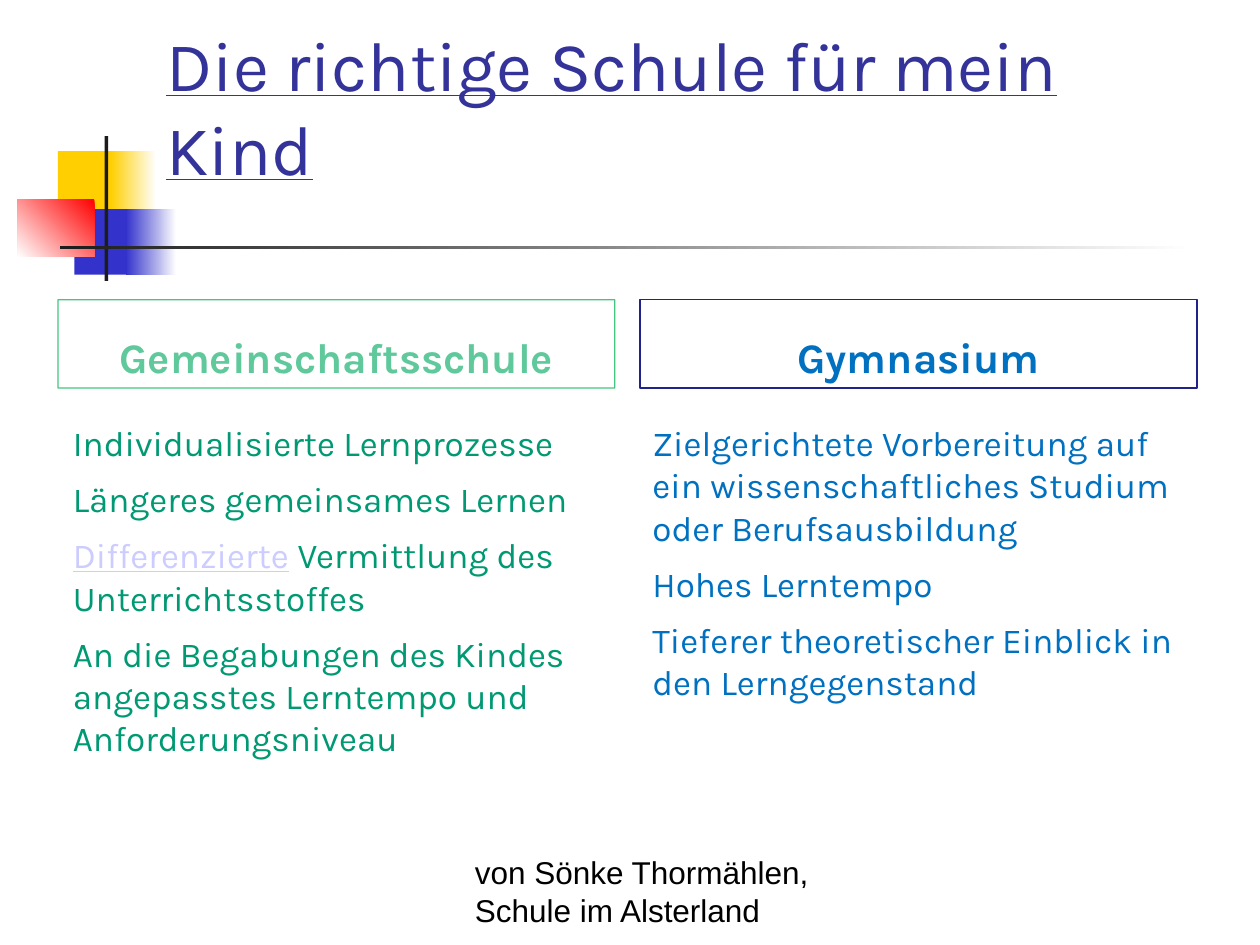
from pptx import Presentation
from pptx.dml.color import RGBColor
from pptx.enum.shapes import MSO_SHAPE
from pptx.enum.text import MSO_ANCHOR, PP_ALIGN
from pptx.oxml.ns import qn
from pptx.util import Pt
from lxml.etree import SubElement

PX = 9144  # EMU per px, at 100 px to the inch

THEME = {
    "font": "Karla", "footer_font": "Arial",
    "title_size": 40, "heading_size": 24, "body_size": 20, "footer_size": 18,
    "title": "333399", "footer": "000000", "accent": "CCCCFF",
    "yellow": "FFCF01", "blue": "3333CC", "red": "FF0000",
    "bar": "1C1C1C", "white": "FFFFFF",
    "green_heading": "60C99C", "green_text": "009973", "green_line": "00B050",
    "blue_text": "0070C0", "blue_line": "22228B",
}


def color(name):
    return RGBColor.from_string(THEME[name])


def add_text(slide, place, paragraphs, font, size, fill, anchor=MSO_ANCHOR.TOP, before=0):
    """Add a wrapped text box; each paragraph is a list of span texts."""
    box = slide.shapes.add_textbox(*[n * PX for n in place])
    frame = box.text_frame
    frame.word_wrap = True
    frame.vertical_anchor = anchor
    for index, texts in enumerate(paragraphs):
        para = frame.add_paragraph() if index else frame.paragraphs[0]
        para.space_before = Pt(before)
        for text in texts:
            span = para.add_run()
            span.text = text
            span.font.name = THEME[font]
            span.font.size = Pt(THEME[size])
            span.font.color.rgb = color(fill)
    return box


deck = Presentation()
deck.slide_width, deck.slide_height = 1000 * PX, 750 * PX
page = deck.slides.add_slide(deck.slide_layouts[6])

# Decoration: place, colours from start to end, clockwise gradient angle
decoration = [
    ((46, 120, 48, 52), ["yellow"], 0),
    ((88, 120, 36, 52), ["white", "yellow"], 180),
    ((59, 166, 46, 52), ["blue"], 0),
    ((100, 166, 40, 52), ["white", "blue"], 180),
    ((14, 158, 61, 46), ["red", "white"], 135),
    ((83, 108, 3, 115), ["bar"], 0),
    ((48, 195, 900, 3), ["white", "bar"], 180),
]
for place, names, angle in decoration:
    block = page.shapes.add_shape(MSO_SHAPE.RECTANGLE, *[n * PX for n in place])
    block.shadow.inherit = False
    block.line.fill.background()
    if len(names) == 1:
        block.fill.solid()
        block.fill.fore_color.rgb = color(names[0])
    else:
        block.fill.gradient()
        block.fill.gradient_angle = 360 - angle
        for stop, name in zip(block.fill.gradient_stops, names):
            stop.color.rgb = color(name)

# Title
title = add_text(page, (122, 30, 828, 125), [["Die richtige Schule für mein Kind"]],
                 "font", "title_size", "title", MSO_ANCHOR.BOTTOM)
title.text_frame.paragraphs[0].runs[0].font.underline = True

# Two columns: heading frame above, points below
columns = [
    (46, 48, "Gemeinschaftsschule", "green_heading", "green_line", 73, "green_text", [
        ["Individualisierte Lernprozesse"],
        ["Längeres gemeinsames Lernen"],
        ["Differenzierte", " Vermittlung des Unterrichtsstoffes"],
        ["An die Begabungen des Kindes angepasstes Lerntempo und Anforderungsniveau"],
    ]),
    (508, 508, "Gymnasium", "blue_text", "blue_line", 100, "blue_text", [
        ["Zielgerichtete Vorbereitung auf ein wissenschaftliches Studium oder Berufsausbildung"],
        ["Hohes Lerntempo"],
        ["Tieferer theoretischer Einblick in den Lerngegenstand"],
    ]),
]
for left, body_left, name, name_color, line_color, opacity, text_color, points in columns:
    heading = add_text(page, (left, 238, 442, 70), [[name]], "font", "heading_size",
                       name_color, MSO_ANCHOR.BOTTOM, before=8)
    heading.line.color.rgb = color(line_color)
    heading.line.width = Pt(0.75)
    if opacity < 100:
        line_fill = heading.element.xpath(".//a:ln//a:srgbClr")[0]
        SubElement(line_fill, qn("a:alpha")).set("val", str(opacity * 1000))
    para = heading.text_frame.paragraphs[0]
    para.alignment = PP_ALIGN.CENTER
    para.runs[0].font.bold = True

    body = add_text(page, (body_left, 330, 442, 353), points, "font", "body_size",
                    text_color, before=8)
    for para in body.text_frame.paragraphs:
        if len(para.runs) > 1:  # the leading word is highlighted
            para.runs[0].font.color.rgb = color("accent")
            para.runs[0].font.underline = True

# Footer
add_text(page, (367, 692, 316, 50), [["von Sönke Thormählen, Schule im Alsterland"]],
         "footer_font", "footer_size", "footer", MSO_ANCHOR.BOTTOM)

deck.save("out.pptx")
